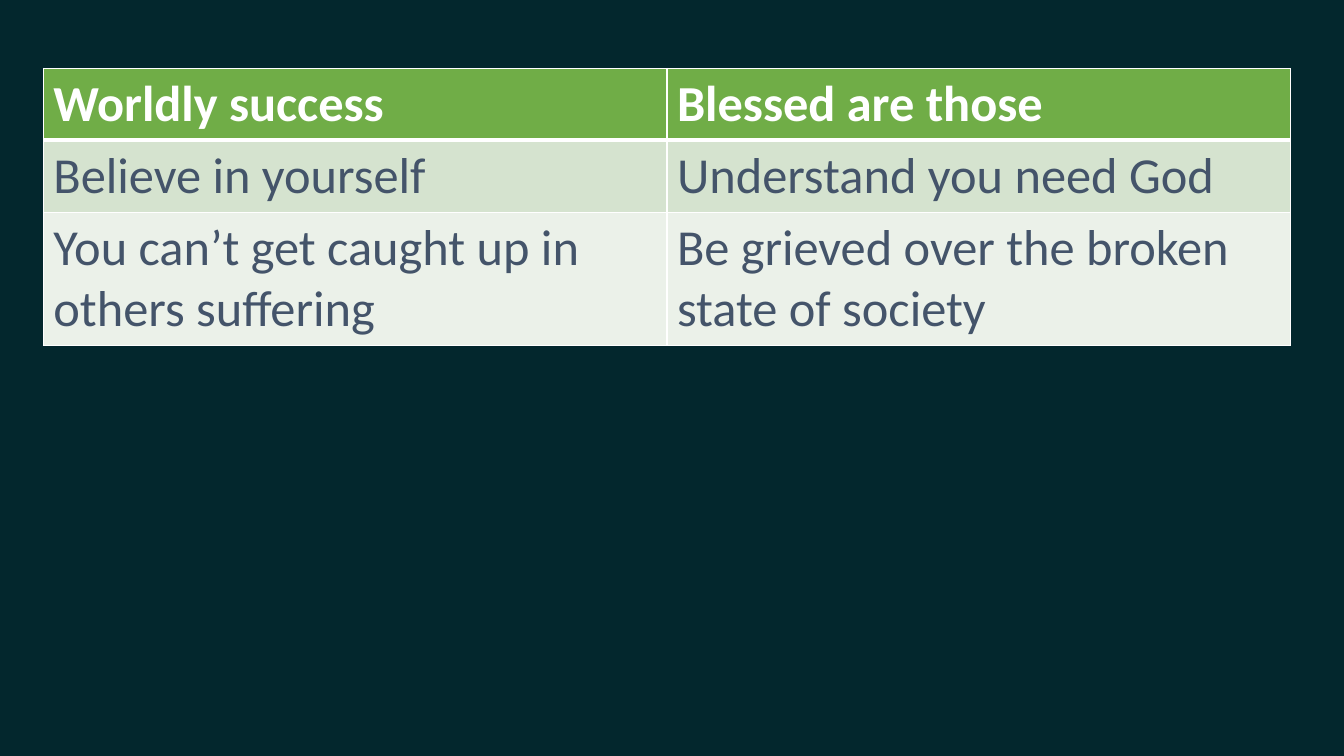
"""Build a slide with a table comparing worldly success and blessedness."""
from lxml import etree
from pptx import Presentation
from pptx.dml.color import RGBColor
from pptx.oxml.ns import qn
from pptx.util import Inches, Pt

COLORS = {
    "background": "03272D",
    "header": "70AD47",
    "odd_row": "D5E3CF",
    "even_row": "EBF1E9",
    "header_text": "FFFFFF",
    "body_text": "44546A",
    "border": "FFFFFF",
}
FONT = "Calibri"
ROWS = [
    ("Worldly success", "Blessed are those"),
    ("Believe in yourself", "Understand you need God"),
    ("You can’t get caught up in others suffering",
     "Be grieved over the broken state of society"),
]
ROW_FILLS = ["header", "odd_row", "even_row"]
ROW_HEIGHTS = [0.7, 0.7, 1.3]
TABLE_LEFT, TABLE_TOP, TABLE_WIDTH = 0.43, 0.68, 12.37


def rgb(name):
    return RGBColor.from_string(COLORS[name])


def set_borders(cell, widths):
    properties = cell._tc.get_or_add_tcPr()
    for index, (side, width) in enumerate(widths.items()):
        line = etree.Element(qn(f"a:ln{side}"), w=str(Pt(width)))
        fill = etree.SubElement(line, qn("a:solidFill"))
        etree.SubElement(fill, qn("a:srgbClr"), val=COLORS["border"])
        properties.insert(index, line)


def fill_cell(cell, text, fill, is_header, borders):
    cell.fill.solid()
    cell.fill.fore_color.rgb = rgb(fill)
    set_borders(cell, borders)
    cell.text_frame.text = text
    font = cell.text_frame.paragraphs[0].runs[0].font
    font.name = FONT
    font.size = Pt(36)
    font.bold = is_header
    font.color.rgb = rgb("header_text" if is_header else "body_text")


def add_comparison_table(slide):
    column_count = len(ROWS[0])
    table = slide.shapes.add_table(
        len(ROWS), column_count, Inches(TABLE_LEFT), Inches(TABLE_TOP),
        Inches(TABLE_WIDTH), Inches(sum(ROW_HEIGHTS))).table
    for column in table.columns:
        column.width = Inches(TABLE_WIDTH / column_count)
    for row_index, texts in enumerate(ROWS):
        table.rows[row_index].height = Inches(ROW_HEIGHTS[row_index])
        borders = {"L": 1, "R": 1,
                   "T": 3 if row_index == 1 else 1,
                   "B": 3 if row_index == 0 else 1}
        for column_index, text in enumerate(texts):
            fill_cell(table.cell(row_index, column_index), text,
                      ROW_FILLS[row_index], row_index == 0, borders)


def main():
    presentation = Presentation()
    presentation.slide_width = Inches(13.33)
    presentation.slide_height = Inches(7.5)
    slide = presentation.slides.add_slide(presentation.slide_layouts[6])
    slide.background.fill.solid()
    slide.background.fill.fore_color.rgb = rgb("background")
    add_comparison_table(slide)
    presentation.save("out.pptx")


if __name__ == "__main__":
    main()
